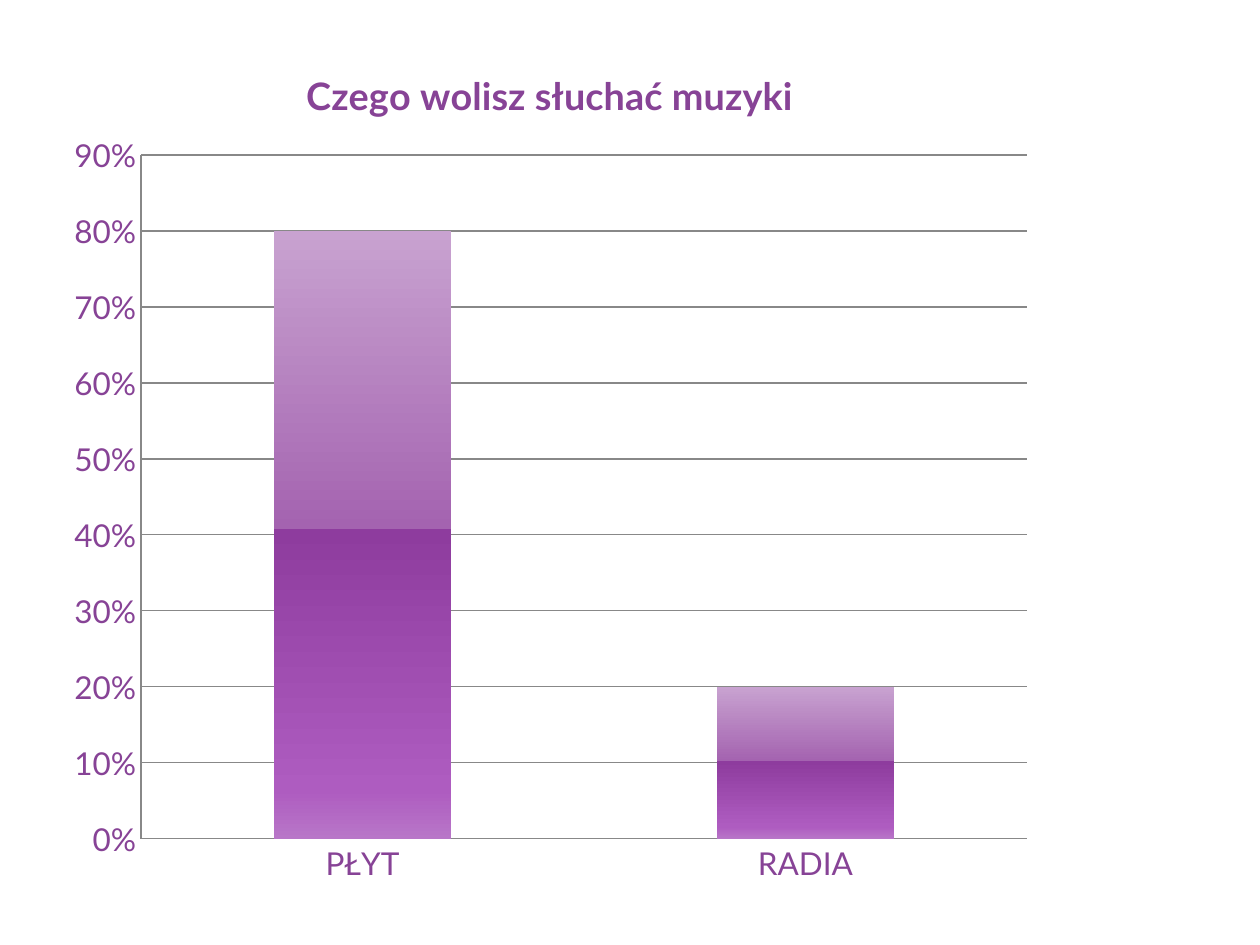
from lxml import etree
from pptx import Presentation
from pptx import util as u
from pptx.chart.data import CategoryChartData
from pptx.dml.color import RGBColor
from pptx.enum import chart as ch
from pptx.oxml import parse_xml
from pptx.oxml.ns import nsdecls, qn

TITLE = "Czego wolisz słuchać muzyki"
ANSWERS = [("PŁYT", 0.8), ("RADIA", 0.2)]
COLORS = {"text": "874396", "line": "888888"}
BAR_STOPS = [(0, "C8A2D0"), (49, "A463B0"), (49, "8E3C9E"), (92, "AE5CC0"), (100, "B876C8")]
SLIDE = (1260, 945)
CHART = (54, 37, 992, 863)
PLOT = (141, 155, 886, 684)
FONT = "Lato"


def px(n):
    return u.Emu(n * 914400 // 126)


def rgb(name):
    return RGBColor.from_string(COLORS[name])


def style_font(font, size, bold):
    font.name, font.size, font.bold = FONT, u.Pt(size), bold
    font.color.rgb = rgb("text")


def style_line(line):
    line.color.rgb = rgb("line")
    line.width = u.Pt(0.75)


def place_plot(chart):
    left, top, width, height = CHART
    fractions = {
        "x": (PLOT[0] - left) / width,
        "y": (PLOT[1] - top) / height,
        "w": PLOT[2] / width,
        "h": PLOT[3] / height,
    }
    values = "".join(f'<c:{key} val="{value:.4f}"/>' for key, value in fractions.items())
    layout = parse_xml(
        f'<c:layout {nsdecls("c")}><c:manualLayout><c:layoutTarget val="inner"/>'
        f'<c:xMode val="edge"/><c:yMode val="edge"/>{values}</c:manualLayout></c:layout>')
    plot_area = chart.element.find(".//" + qn("c:plotArea"))
    for old in plot_area.findall(qn("c:layout")):
        plot_area.remove(old)
    plot_area.insert(0, layout)


def fill_bars(series):
    fill = series.format.fill
    fill.gradient()
    fill.gradient_angle = 270
    stops = series.format.element.find(".//" + qn("a:gsLst")) if hasattr(series.format, "element") \
        else series.element.find(".//" + qn("a:gsLst"))
    for old in list(stops):
        stops.remove(old)
    for position, color in BAR_STOPS:
        stop = etree.SubElement(stops, qn("a:gs"), pos=str(position * 1000))
        etree.SubElement(stop, qn("a:srgbClr"), val=color)


prs = Presentation()
prs.slide_width, prs.slide_height = map(px, SLIDE)
slide = prs.slides.add_slide(prs.slide_layouts[6])

data = CategoryChartData(number_format="0%")
data.categories = [answer for answer, share in ANSWERS]
data.add_series("Series 1", [share for answer, share in ANSWERS])
chart = slide.shapes.add_chart(
    ch.XL_CHART_TYPE.COLUMN_CLUSTERED, *map(px, CHART), data).chart
style_font(chart.font, 18, False)
chart.has_legend = False
chart.has_title = True
chart.chart_title.text_frame.text = TITLE
chart.chart_title.include_in_layout = False
style_font(chart.chart_title.text_frame.paragraphs[0].runs[0].font, 21.6, True)
place_plot(chart)

bars = chart.plots[0]
bars.gap_width = 150
bars.vary_by_categories = False
fill_bars(bars.series[0])

for axis in (chart.category_axis, chart.value_axis):
    axis.major_tick_mark = axis.minor_tick_mark = ch.XL_TICK_MARK.NONE
    style_font(axis.tick_labels.font, 18, False)
    style_line(axis.format.line)

shares = chart.value_axis
shares.minimum_scale, shares.maximum_scale, shares.major_unit = 0, 0.9, 0.1
shares.has_major_gridlines = True
style_line(shares.major_gridlines.format.line)
shares.tick_labels.number_format = "0%"
shares.tick_labels.number_format_is_linked = False

prs.save("out.pptx")
